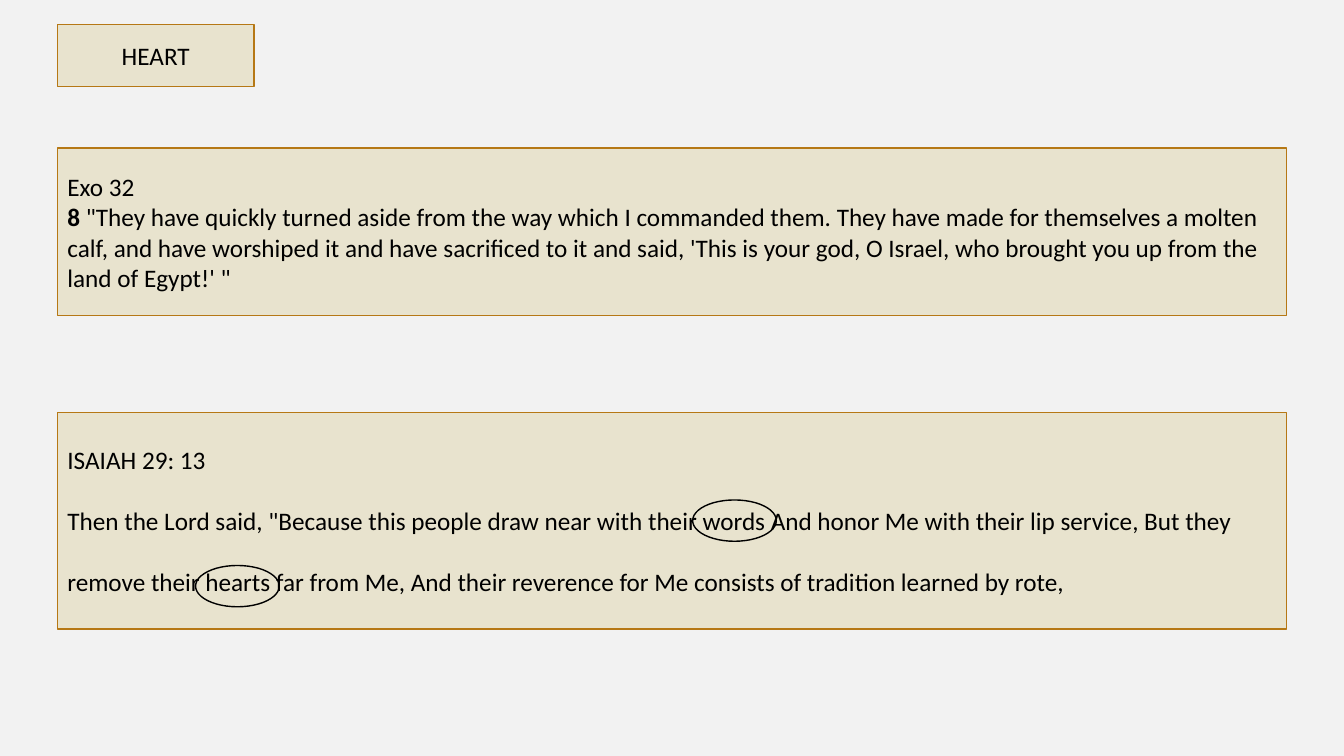
from pptx import Presentation
from pptx.dml.color import RGBColor
from pptx.enum.shapes import MSO_SHAPE as Shape
from pptx.enum.text import MSO_ANCHOR as Anchor, MSO_AUTO_SIZE as AutoSize, PP_ALIGN as Align
from pptx.util import Inches, Pt

# Content: each paragraph is a list of (text, bold) runs
TITLE = [[("HEART", False)]]
EXODUS = [
    [("Exo 32", False)],
    [("8", True),
     (" \"They have quickly turned aside from the way which I commanded them. "
      "They have made for themselves a molten calf, and have worshiped it and have "
      "sacrificed to it and said, 'This is your god, O Israel, who brought you up "
      "from the land of Egypt!' \"", False)],
]
ISAIAH = [
    [("ISAIAH 29: 13", False)],
    [("Then the Lord said, \"Because this people draw near with their words "
      "And honor Me with their lip service, But they", False)],
    [("remove their hearts far from Me, And their reverence for Me consists of "
      "tradition learned by rote,", False)],
]

# Layout in inches
WIDTH, HEIGHT = 13.33, 7.5
MARGIN = 0.57
VERSE_WIDTH = WIDTH - 2 * MARGIN
TITLE_BOX = (MARGIN, 0.24, 1.95, 0.62)
VERSES = [  # paragraphs, top, height, gap between paragraphs in points
    (ISAIAH, 4.09, 2.15, 22),
    (EXODUS, 1.47, 1.66, 0),
]
RING_SIZE = (0.83, 0.41)
RINGS = [(1.94, 5.61), (6.87, 4.96)]  # around "hearts" and "words"

PAPER, SAND, BRONZE, BLACK = "F2F2F2", "E8E3CE", "B67815", "000000"


def color(value):
    return RGBColor.from_string(value)


def outline(shape, value):
    shape.line.color.rgb = color(value)
    shape.line.width = Pt(1)


def fill_box(box, paragraphs, align=Align.LEFT, gap=0):
    box.fill.solid()
    box.fill.fore_color.rgb = color(SAND)
    outline(box, BRONZE)
    frame = box.text_frame
    frame.word_wrap = True
    frame.auto_size = AutoSize.NONE
    frame.vertical_anchor = Anchor.MIDDLE
    for index, runs in enumerate(paragraphs):
        para = frame.add_paragraph() if index else frame.paragraphs[0]
        para.alignment = align
        para.space_before = Pt(gap if index else 0)
        para.font.name = "Calibri"
        para.font.size = Pt(18)
        para.font.color.rgb = color(BLACK)
        for text, bold in runs:
            span = para.add_run()
            span.text = text
            span.font.bold = bold


deck = Presentation()
deck.slide_width, deck.slide_height = Inches(WIDTH), Inches(HEIGHT)
page = deck.slides.add_slide(deck.slide_layouts[5])
page.background.fill.solid()
page.background.fill.fore_color.rgb = color(PAPER)

# Title
title = page.shapes.title
title.left, title.top, title.width, title.height = map(Inches, TITLE_BOX)
fill_box(title, TITLE, Align.CENTER)

# Verses
for paragraphs, top, height, gap in VERSES:
    box = page.shapes.add_shape(
        Shape.RECTANGLE, *map(Inches, (MARGIN, top, VERSE_WIDTH, height)))
    box.shadow.inherit = False
    fill_box(box, paragraphs, gap=gap)

# Rings around the key words
for place in RINGS:
    ring = page.shapes.add_shape(Shape.OVAL, *map(Inches, place + RING_SIZE))
    ring.shadow.inherit = False
    ring.fill.background()
    outline(ring, BLACK)

deck.save("out.pptx")
